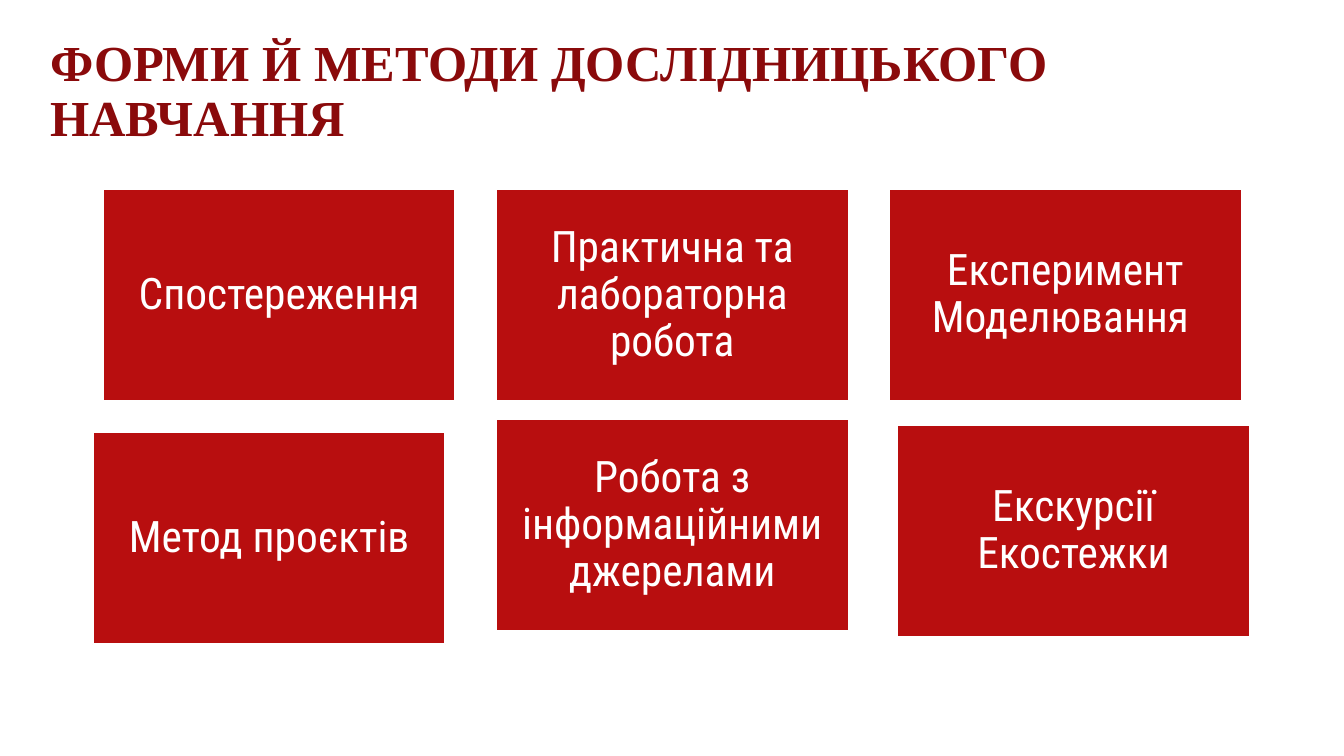
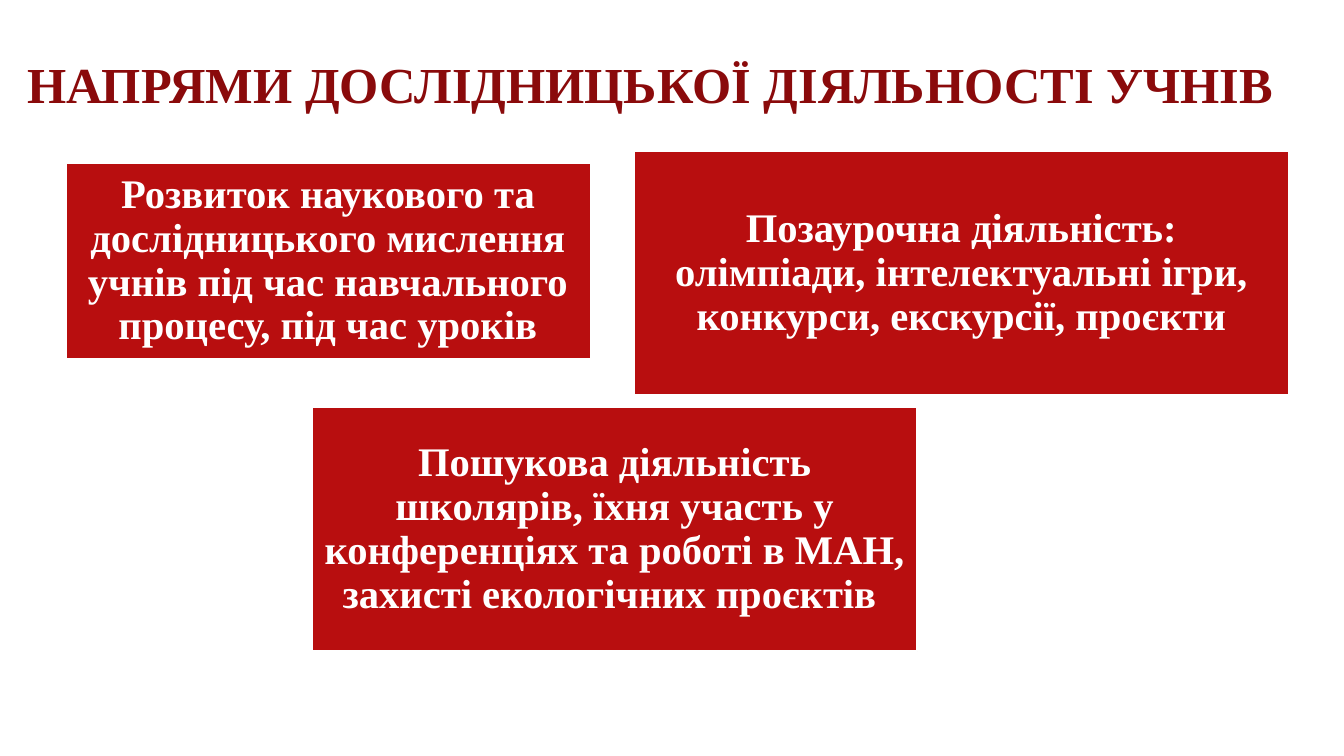
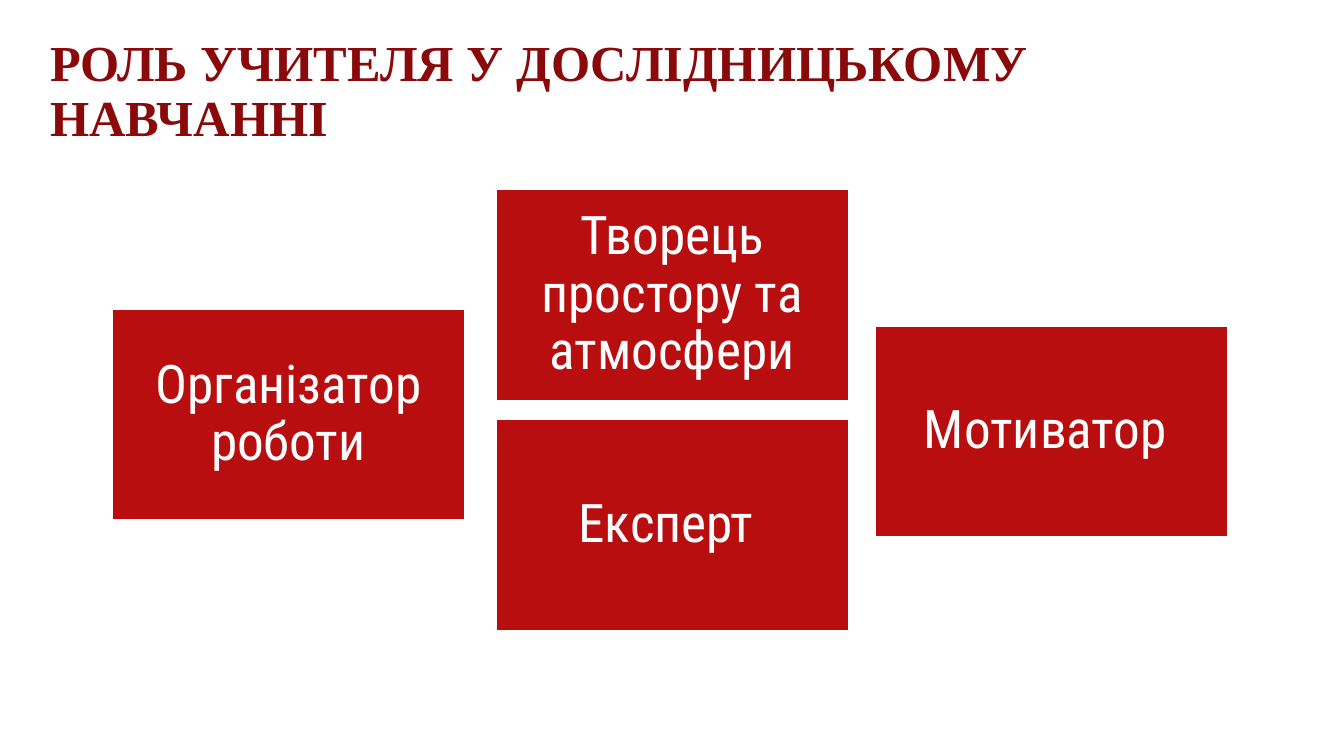
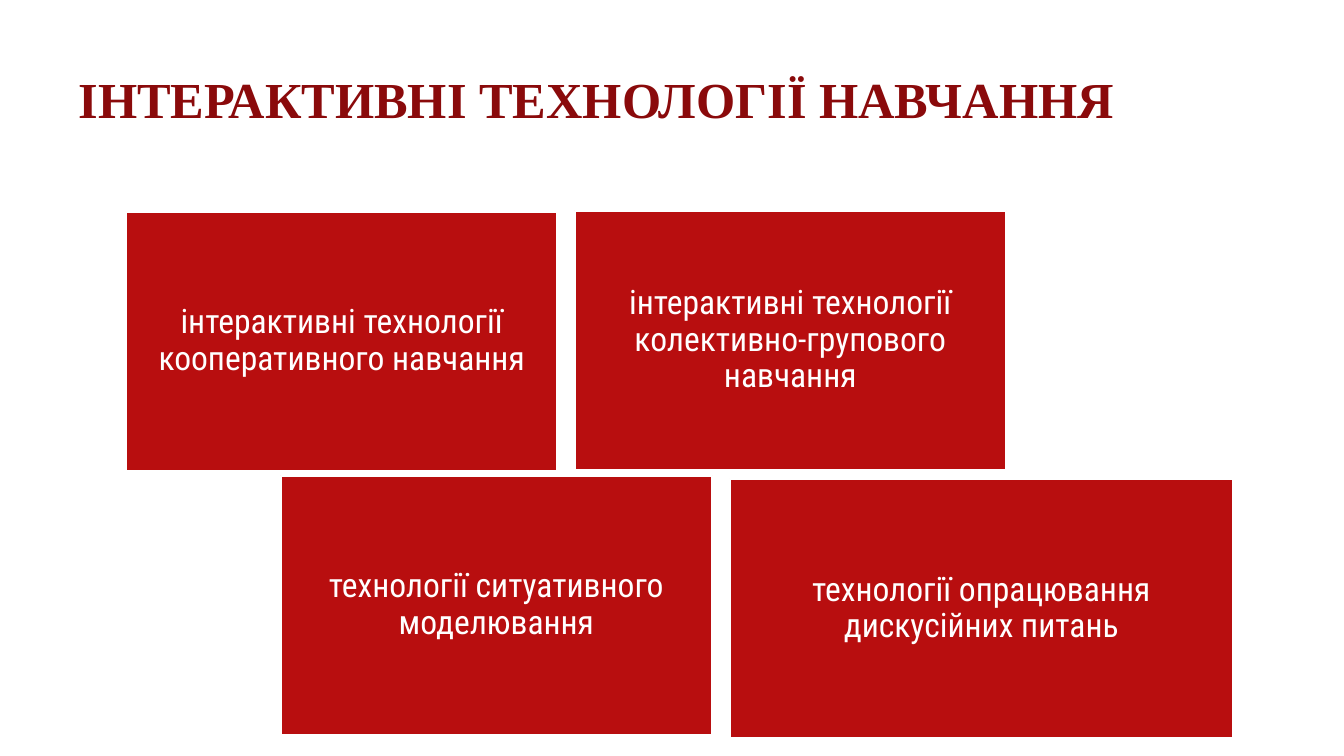
from pptx import Presentation
from pptx.dml.color import RGBColor
from pptx.enum import shapes, text
from pptx.util import Pt

RED = RGBColor(0xB8, 0x0E, 0x0F)
DARK_RED = RGBColor(0x8A, 0x0A, 0x0B)
WHITE = RGBColor(0xFF, 0xFF, 0xFF)

SERIF = "Times New Roman"
CONDENSED = "Roboto Condensed"
TITLE_FONT = {"name": SERIF, "size": Pt(36), "bold": True}
TITLE_HEIGHT = 90.7
WIDE_TITLE = (28.8, 20.9, 818.6)

CARD_W, CARD_H = 252, 151.2
LEFT, MIDDLE, RIGHT = (73.4 + 280.8 * column for column in range(3))
TOP, BOTTOM = 135.2, 299.5
TECH_W, TECH_H = 308.2, 185


def set_all(target, values):
    for key, value in values.items():
        setattr(target, key, value)


def write(frame, words, font, color, align, margins):
    set_all(frame, {"word_wrap": True, "vertical_anchor": text.MSO_ANCHOR.MIDDLE, **margins})
    line = frame.paragraphs[0]
    set_all(line, {"alignment": align, "line_spacing": 0.9})
    run = line.add_run()
    run.text = words
    set_all(run.font, font)
    run.font.color.rgb = color


def add_title(slide, words, place, align=text.PP_ALIGN.LEFT):
    heading = slide.shapes.add_textbox(*map(Pt, (*place, TITLE_HEIGHT)))
    write(heading.text_frame, words, TITLE_FONT, DARK_RED, align, {})


def add_card(slide, words, place, font, inset):
    card = slide.shapes.add_shape(shapes.MSO_SHAPE.RECTANGLE, *map(Pt, place))
    card.shadow.inherit = False
    card.fill.solid()
    card.fill.fore_color.rgb = RED
    card.line.color.rgb = WHITE
    card.line.width = Pt(1.5)
    margins = {f"margin_{side}": Pt(inset) for side in ("left", "top", "right", "bottom")}
    write(card.text_frame, words, font, WHITE, text.PP_ALIGN.CENTER, margins)


def add_cards(slide, cards, size, inset, name=CONDENSED, bold=False):
    font = {"name": name, "size": Pt(size), "bold": bold}
    for words, *place in cards:
        add_card(slide, words, place, font, inset)


def add_methods(slide):
    add_title(slide, "ФОРМИ Й МЕТОДИ ДОСЛІДНИЦЬКОГО НАВЧАННЯ", WIDE_TITLE)
    methods = [
        ("Експеримент Моделювання ", RIGHT, TOP),
        ("Практична та лабораторна робота", MIDDLE, TOP),
        ("Спостереження", LEFT, TOP),
        ("Метод проєктів", 66.2, 308.9),
        ("Робота з інформаційними джерелами", MIDDLE, BOTTOM),
        ("Екскурсії Екостежки", 640.8, 303.8),
    ]
    add_cards(slide, [(*method, CARD_W, CARD_H) for method in methods], 31, 9.4)


def add_directions(slide):
    add_title(slide, "НАПРЯМИ ДОСЛІДНИЦЬКОЇ ДІЯЛЬНОСТІ УЧНІВ",
              (8.6, 17.3, 912.2), text.PP_ALIGN.CENTER)
    directions = [
        ("Позаурочна діяльність: олімпіади, інтелектуальні ігри, конкурси, екскурсії, проєкти",
         452.9, 108, 468, 174.2),
        ("Розвиток наукового та дослідницького мислення учнів під час навчального процесу, "
         "під час уроків", 46.8, 116.6, 375.1, 139.7),
        ("Пошукова діяльність школярів, їхня участь у конференціях та роботі в МАН, "
         "захисті екологічних проєктів ", 223.2, 290.9, 432, 174.2),
    ]
    add_cards(slide, directions, 29, 8.6, SERIF, True)


def add_teacher_roles(slide):
    add_title(slide, "РОЛЬ УЧИТЕЛЯ У ДОСЛІДНИЦЬКОМУ НАВЧАННІ", WIDE_TITLE)
    roles = [
        ("Мотиватор ", 625, 232.8),
        ("Творець простору та атмосфери", MIDDLE, TOP),
        ("Організатор роботи", 80, 220.5),
        ("Експерт ", MIDDLE, BOTTOM),
    ]
    add_cards(slide, [(*role, CARD_W, CARD_H) for role in roles], 38, 11.4)


def add_technologies(slide):
    add_title(slide, "ІНТЕРАКТИВНІ ТЕХНОЛОГІЇ НАВЧАННЯ", (49, 27.4, 818.6))
    technologies = [
        ("технології ситуативного моделювання", 200.4, 339.8, TECH_W, TECH_H),
        ("інтерактивні технології колективно-групового навчання", 410.4, 150.5, TECH_W, TECH_H),
        ("інтерактивні технології кооперативного навчання", 90, 151.2, TECH_W, TECH_H),
        ("технології опрацювання дискусійних питань", 521.3, 342, 359.3, TECH_H),
    ]
    add_cards(slide, technologies, 24, 7.2)


def main():
    deck = Presentation()
    set_all(deck, {"slide_width": Pt(960), "slide_height": Pt(540)})
    for fill_slide in (add_methods, add_directions, add_teacher_roles, add_technologies):
        fill_slide(deck.slides.add_slide(deck.slide_layouts[6]))
    deck.save("out.pptx")


if __name__ == "__main__":
    main()
